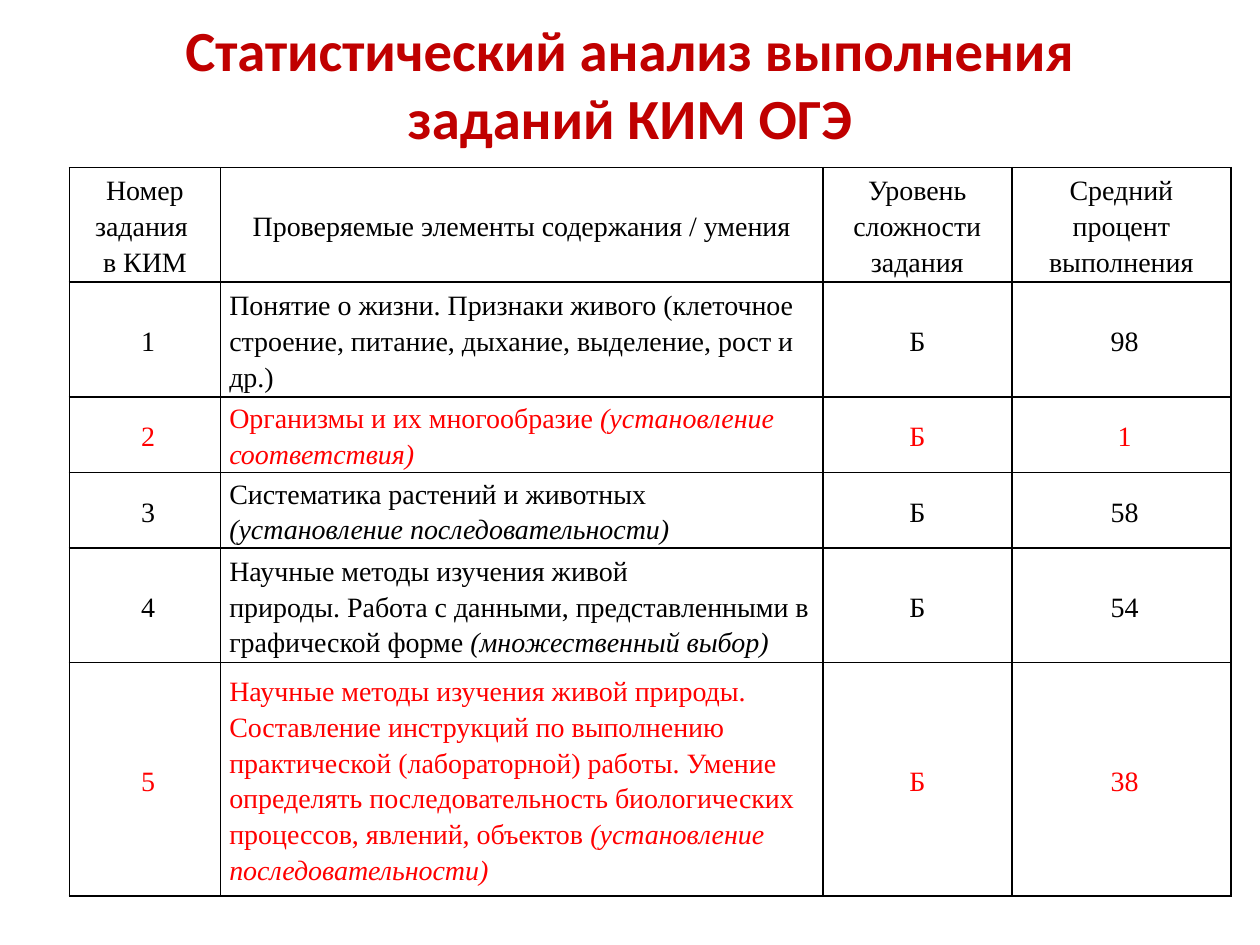
import pptx
import pptx.util
import pptx.dml.color
import pptx.enum.text
from lxml import etree

Inches, Pt = pptx.util.Inches, pptx.util.Pt
ALIGN = pptx.enum.text.PP_ALIGN
MIDDLE = pptx.enum.text.MSO_ANCHOR.MIDDLE
A = "http://schemas.openxmlformats.org/drawingml/2006/main"
BLACK, RED, DARK = "000000", "FF0000", "C00000"

TITLE = "Статистический анализ выполнения заданий КИМ ОГЭ"
HEAD = ["Номер\nзадания \vв КИМ", "Проверяемые элементы содержания / умения",
        "Уровень сложности задания", "Средний процент выполнения"]
# topic, part in italics, level, mean percent, colour
TASKS = [
    ("Понятие о жизни. Признаки живого (клеточное строение, питание, "
     "дыхание, выделение, рост и др.)", "", "Б", 98, BLACK),
    ("Организмы и их многообразие ", "(установление соответствия)",
     "Б", 1, RED),
    ("Систематика растений и животных ",
     "(установление последовательности)", "Б", 58, BLACK),
    ("Научные методы изучения живой\nприроды. Работа с данными, "
     "представленными в графической форме ", "(множественный выбор)",
     "Б", 54, BLACK),
    ("Научные методы изучения живой природы. Составление инструкций по "
     "выполнению практической (лабораторной) работы. Умение определять "
     "последовательность биологических процессов, явлений, объектов ",
     "(установление последовательности)", "Б", 38, RED),
]
COLS = [1.2, 4.78, 1.5, 1.74]
ROWS = [0.91, 0.91, 0.6, 0.6, 0.91, 1.85]


def style(font, name, size, color):
    font.name, font.size = name, Pt(size)
    font.color.rgb = pptx.dml.color.RGBColor.from_string(color)


def border(cell):
    """Draw a thin black line on all four sides."""
    props = cell._tc.get_or_add_tcPr()
    for i, side in enumerate(("lnL", "lnR", "lnT", "lnB")):
        line = etree.Element(f"{{{A}}}{side}", w=str(Pt(1)))
        fill = etree.SubElement(line, f"{{{A}}}solidFill")
        etree.SubElement(fill, f"{{{A}}}srgbClr", val=BLACK)
        props.insert(i, line)


def put(cell, text, color, align, slant="", indent=0):
    """Fill a cell; slant is italic text after the main text."""
    cell.margin_left = cell.margin_right = Inches(0.07)
    cell.margin_top = cell.margin_bottom = 0
    cell.vertical_anchor = MIDDLE
    cell.fill.background()
    border(cell)
    frame = cell.text_frame
    frame.text = text
    if slant:
        run = frame.paragraphs[-1].add_run()
        run.text = slant
        run.font.italic = True
    for para in frame.paragraphs:
        para.alignment, para.line_spacing = align, 1.15
        if indent:
            para._p.get_or_add_pPr().set("indent", str(Inches(indent)))
        for run in para.runs:
            style(run.font, "Times New Roman", 16, color)


deck = pptx.Presentation()
deck.slide_width, deck.slide_height = Inches(10), Inches(7.5)
slide = deck.slides.add_slide(deck.slide_layouts[5])

title = slide.shapes.title
title.left, title.top = Inches(0.5), Inches(0.3)
title.width, title.height = Inches(9), Inches(1.25)
frame = title.text_frame
frame.text = TITLE
frame.word_wrap, frame.vertical_anchor = True, MIDDLE
frame.margin_bottom = Inches(0.59)
para = frame.paragraphs[0]
para.alignment = ALIGN.CENTER
for run in para.runs:
    style(run.font, "Calibri", 32.4, DARK)
    run.font.bold = True

table = slide.shapes.add_table(
    len(ROWS), len(COLS), Inches(0.55), Inches(1.33),
    Inches(sum(COLS)), Inches(sum(ROWS))).table
table.first_row = table.horz_banding = False
for col, width in zip(table.columns, COLS):
    col.width = Inches(width)
for row, height in zip(table.rows, ROWS):
    row.height = Inches(height)

for c, text in enumerate(HEAD):
    put(table.cell(0, c), text, BLACK, ALIGN.CENTER)
for r, (topic, slant, level, mean, color) in enumerate(TASKS, 1):
    put(table.cell(r, 0), str(r), color, ALIGN.CENTER, indent=0.05)
    put(table.cell(r, 1), topic, color, ALIGN.LEFT, slant)
    put(table.cell(r, 2), level, color, ALIGN.CENTER)
    put(table.cell(r, 3), str(mean), color, ALIGN.CENTER, indent=0.05)

deck.save("out.pptx")
